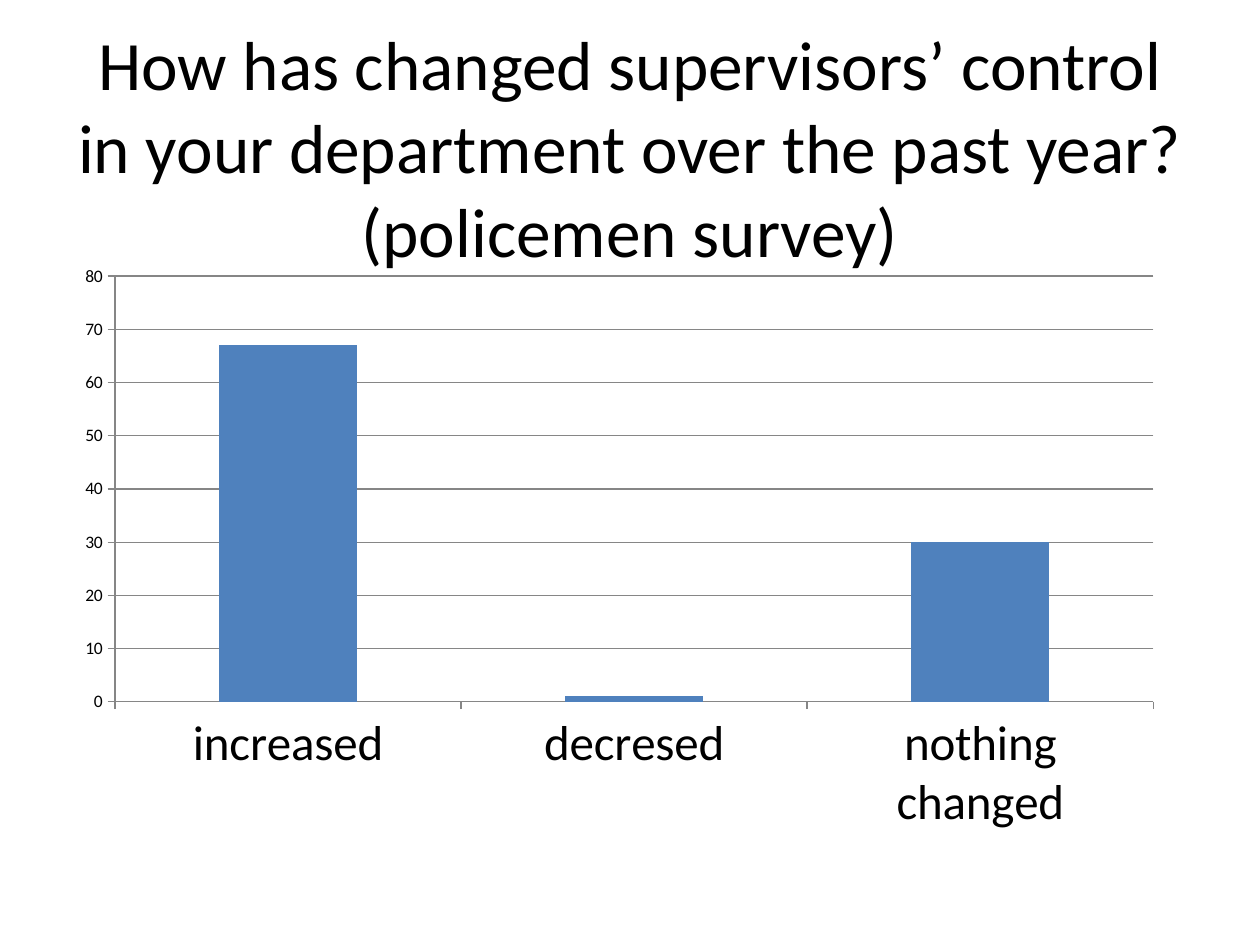
from dataclasses import dataclass

from pptx import Presentation
from pptx.chart.data import CategoryChartData
from pptx.dml.color import RGBColor
from pptx.enum.chart import XL_CHART_TYPE as ChartType, XL_TICK_MARK as Tick
from pptx.enum.text import MSO_ANCHOR as Anchor, PP_ALIGN as Align
from pptx.util import Pt


@dataclass(frozen=True)
class Theme:
    font: str = "Calibri"
    ink: RGBColor = RGBColor(0x00, 0x00, 0x00)
    bar: RGBColor = RGBColor(0x4F, 0x81, 0xBD)
    rule: RGBColor = RGBColor(0x86, 0x86, 0x86)
    title_size: float = 39.6
    category_size: float = 28
    value_size: float = 10


THEME = Theme()


def style_font(font, size, color=THEME.ink):
    font.name = THEME.font
    font.size = Pt(size)
    font.color.rgb = color


def add_text(slide, text, left, top, width, height, *, size,
             color=THEME.ink, align=Align.LEFT, anchor=Anchor.TOP):
    box = slide.shapes.add_textbox(Pt(left), Pt(top), Pt(width), Pt(height))
    frame = box.text_frame
    frame.word_wrap = True
    frame.vertical_anchor = anchor
    paragraph = frame.paragraphs[0]
    paragraph.text = text
    paragraph.alignment = align
    style_font(paragraph.font, size, color)


def style_line(line):
    line.color.rgb = THEME.rule
    line.width = Pt(0.75)


def style_axis(axis, size):
    axis.major_tick_mark = Tick.OUTSIDE
    axis.minor_tick_mark = Tick.NONE
    style_line(axis.format.line)
    style_font(axis.tick_labels.font, size)


def add_bar_chart(slide, answers, left, top, width, height):
    survey = CategoryChartData()
    survey.categories = list(answers)
    survey.add_series("Series 1", list(answers.values()))
    chart = slide.shapes.add_chart(
        ChartType.COLUMN_CLUSTERED,
        Pt(left), Pt(top), Pt(width), Pt(height), survey).chart
    chart.has_legend = False
    chart.has_title = False
    style_font(chart.font, THEME.value_size)

    style_axis(chart.category_axis, THEME.category_size)
    percent_axis = chart.value_axis
    style_axis(percent_axis, THEME.value_size)
    percent_axis.minimum_scale = 0
    percent_axis.maximum_scale = 80
    percent_axis.major_unit = 10
    percent_axis.has_major_gridlines = True
    style_line(percent_axis.major_gridlines.format.line)

    plot = chart.plots[0]
    plot.gap_width = 150
    plot.vary_by_categories = False
    bars = plot.series[0].format.fill
    bars.solid()
    bars.fore_color.rgb = THEME.bar


def main():
    deck = Presentation()
    deck.slide_width, deck.slide_height = Pt(720), Pt(540)
    slide = deck.slides.add_slide(deck.slide_layouts[6])
    add_text(slide,
             "How has changed supervisors’ control in your department "
             "over the past year? (policemen survey)",
             36, 21.6, 648, 123.84, size=THEME.title_size,
             align=Align.CENTER, anchor=Anchor.MIDDLE)
    add_bar_chart(slide,
                  {"increased": 67, "decresed": 1, "nothing changed": 30},
                  36, 145.44, 635.76, 336.96)
    deck.save("out.pptx")


if __name__ == "__main__":
    main()
